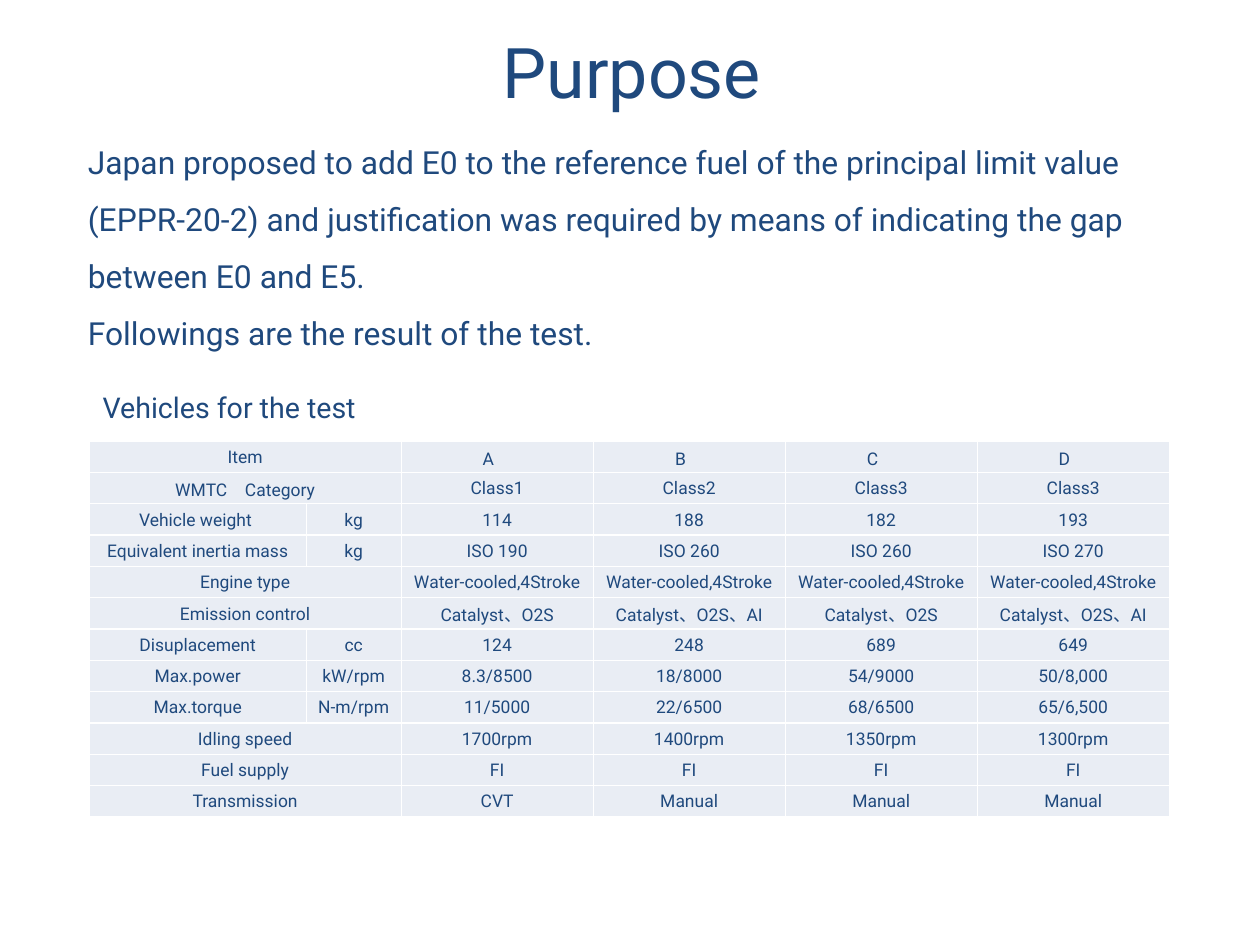
from lxml.etree import SubElement
from pptx import Presentation
from pptx.dml.color import RGBColor
from pptx.enum.text import MSO_ANCHOR as Anchor, PP_ALIGN as Align
from pptx.oxml.ns import qn
from pptx.util import Cm, Inches, Pt

NAVY = RGBColor(0x1F, 0x49, 0x7D)
PALE = RGBColor(0xE9, 0xED, 0xF4)
WHITE = RGBColor(0xFF, 0xFF, 0xFF)
FONT = "Roboto"

TITLE = "Purpose"
INTRO = (
    "Japan proposed to add E0 to the reference fuel of the principal limit value "
    "(EPPR-20-2) and justification was required by means of indicating the gap "
    "between E0 and E5.\n"
    "Followings are the result of the test."
)
LABEL = "Vehicles for the test"
ENGINE = "Water-cooled,4Stroke"
ROWS = [
    ("Item", "", "A　", "B　", "C　", "D　"),
    ("WMTC　Category", "", "Class1", "Class2", "Class3", "Class3"),
    ("Vehicle weight ", "kg", "114", "188", "182", "193"),
    ("Equivalent inertia mass", "kg", "ISO 190", "ISO 260", "ISO 260", "ISO 270"),
    ("Engine type", "", ENGINE, ENGINE, ENGINE, ENGINE),
    ("Emission control", "", "Catalyst、O2S", "Catalyst、O2S、AI", "Catalyst、O2S", "Catalyst、O2S、AI"),
    ("Disuplacement", "cc", "124", "248", "689", "649"),
    ("Max.power", "kW/rpm", "8.3/8500", "18/8000", "54/9000", "50/8,000"),
    ("Max.torque", "N-m/rpm", "11/5000", "22/6500", "68/6500", "65/6,500"),
    ("Idling speed", "", "1700rpm", "1400rpm", "1350rpm", "1300rpm"),
    ("Fuel supply", "", "FI", "FI", "FI", "FI"),
    ("Transmission", "", "CVT", "Manual", "Manual", "Manual"),
]
COLS = [1.9, 0.83] + [1.68] * 4
TABLE_LEFT, TABLE_TOP, TABLE_HIGH = 0.78, 3.86, 3.29


def style(frame, size, align=Align.LEFT, space=None):
    for para in frame.paragraphs:
        para.alignment = align
        if space:
            para.line_spacing = space
        for run in para.runs:
            run.font.size = Pt(size)
            run.font.name = FONT
            run.font.color.rgb = NAVY


def add_text(slide, area, text, size, align=Align.LEFT, space=None):
    frame = slide.shapes.add_textbox(*map(Inches, area)).text_frame
    frame.word_wrap = True
    frame.text = text
    style(frame, size, align, space)
    return frame


def add_edges(cell):
    props = cell._tc.get_or_add_tcPr()
    for side in ("lnL", "lnR", "lnT", "lnB"):
        line = SubElement(props, qn("a:" + side), w=str(Pt(1)))
        fill = SubElement(line, qn("a:solidFill"))
        SubElement(fill, qn("a:srgbClr"), val=str(WHITE))


def fill_cell(cell, text):
    add_edges(cell)
    cell.fill.solid()
    cell.fill.fore_color.rgb = PALE
    cell.vertical_anchor = Anchor.MIDDLE
    cell.margin_left = cell.margin_right = cell.margin_top = Inches(0.01)
    cell.margin_bottom = 0
    cell.text_frame.text = text
    style(cell.text_frame, 11, Align.CENTER)


def add_grid(slide):
    area = (TABLE_LEFT, TABLE_TOP, sum(COLS), TABLE_HIGH)
    table = slide.shapes.add_table(len(ROWS), len(COLS), *map(Inches, area)).table
    table.first_row = table.horz_banding = False
    for col, wide in zip(table.columns, COLS):
        col.width = Inches(wide)
    for r, row in enumerate(ROWS):
        table.rows[r].height = Inches(TABLE_HIGH / len(ROWS))
        for c, text in enumerate(row):
            fill_cell(table.cell(r, c), text)
        if not row[1]:
            table.cell(r, 0).merge(table.cell(r, 1))


def main():
    deck = Presentation()
    deck.slide_width = Cm(28)
    deck.slide_height = Cm(21)
    slide = deck.slides.add_slide(deck.slide_layouts[6])
    add_text(slide, (0.67, 1.03, 9.72, 2.21), INTRO, 20, space=1.5)
    add_grid(slide)
    add_text(slide, (0.8, 3.36, 7.06, 0.4), LABEL, 18)
    title = add_text(slide, (0.57, 0.08, 9.92, 1.08), TITLE, 44, Align.CENTER)
    title.vertical_anchor = Anchor.MIDDLE
    title.margin_left = title.margin_right = title.margin_top = title.margin_bottom = 0
    deck.save("out.pptx")


if __name__ == "__main__":
    main()
